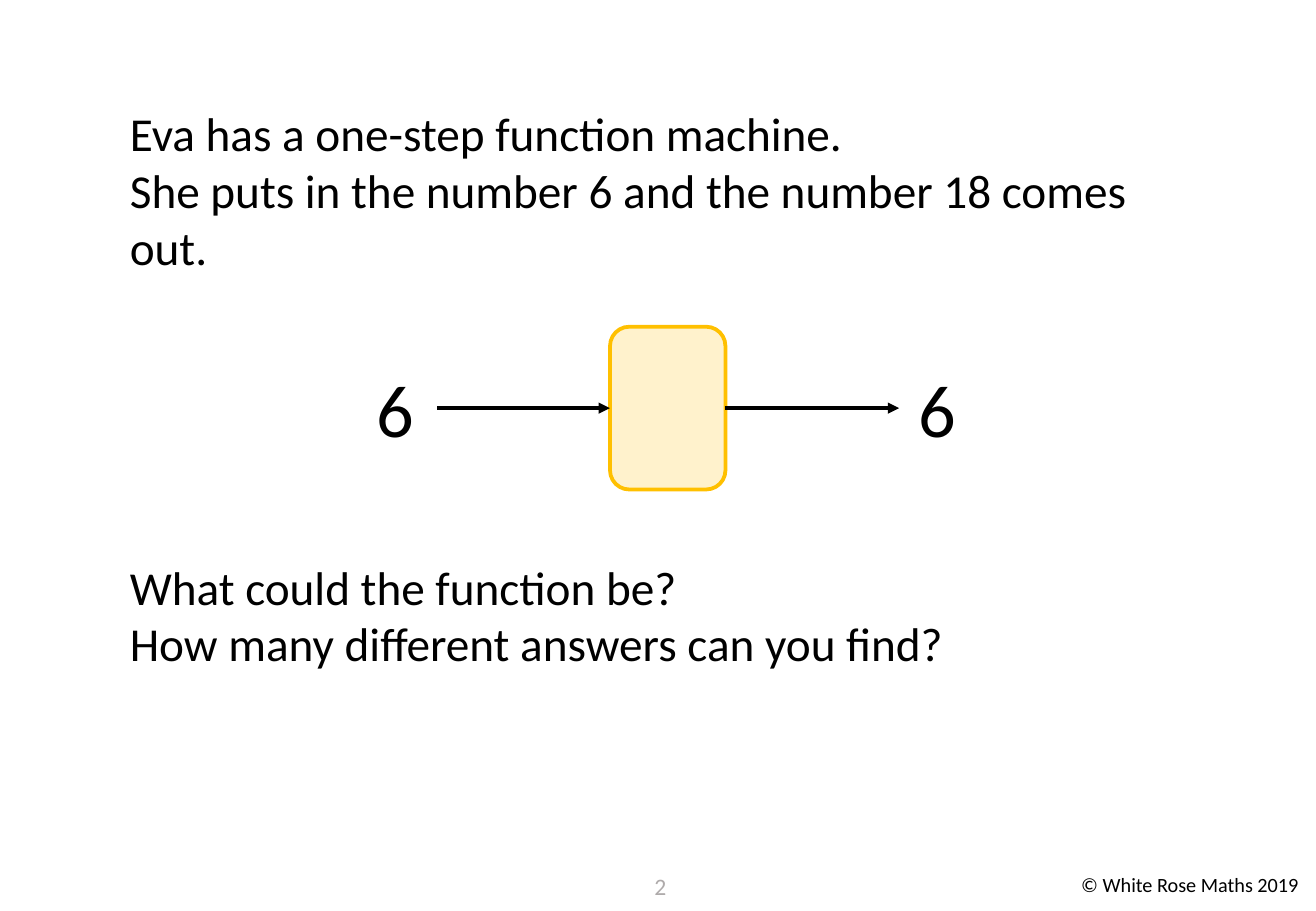
from lxml import etree
from pptx import Presentation
from pptx.dml.color import RGBColor
from pptx.enum.shapes import MSO_CONNECTOR as CONN, MSO_SHAPE as SHAPE
from pptx.enum.text import PP_ALIGN as ALIGN
from pptx.oxml.ns import qn
from pptx.util import Inches, Pt

# Content
QUESTION = [
    "Eva has a one-step function machine.",
    "She puts in the number 6 and the number 18 comes out.",
    "What could the function be?",
    "How many different answers can you find?",
]
MACHINE_GAP = 168  # points left for the machine above the third line
INPUT, OUTPUT = "6", "6"
PAGE = "2"
COPYRIGHT = "© White Rose Maths 2019"

THEME = {
    "font": "Calibri", "ink": "000000", "muted": "AFABAB", "machine": "FFC000",
    "body": 28, "number": 44, "page": 14, "footer": 12, "line": 2.25,
}

# Layout in inches
MID_Y = 3.36
NUMBER_W, NUMBER_H = 0.7, 0.84
INPUT_X, OUTPUT_X = 2.9, 7.36
MACHINE_X, MACHINE_W, MACHINE_H = 5.02, 0.95, 1.34
ARROW_END = 7.4

prs = Presentation()
prs.slide_width, prs.slide_height = Inches(10.83), Inches(7.5)
slide = prs.slides.add_slide(prs.slide_layouts[6])


def rgb(name):
    return RGBColor.from_string(THEME[name])


def add_text(lines, box, size, color="ink", align=ALIGN.LEFT, wrap=True):
    sp = slide.shapes.add_textbox(*map(Inches, box))
    tf = sp.text_frame
    tf.word_wrap = wrap
    tf.text = "\n".join(lines)
    for p in tf.paragraphs:
        p.alignment = align
        for r in p.runs:
            r.font.color.rgb = rgb(color)
            for key, value in {"name": THEME["font"], "size": Pt(THEME[size])}.items():
                setattr(r.font, key, value)
    return sp


def add_number(text, x):
    box = (x, MID_Y - NUMBER_H / 2, NUMBER_W, NUMBER_H)
    return add_text([text], box, "number", align=ALIGN.CENTER)


def add_arrow(x1, x2, start, end=None):
    line = slide.shapes.add_connector(
        CONN.STRAIGHT, Inches(x1), Inches(MID_Y), Inches(x2), Inches(MID_Y))
    line.begin_connect(start, 3)
    if end is not None:
        line.end_connect(end, 1)
    line.line.color.rgb = rgb("ink")
    line.line.width = Pt(THEME["line"])
    etree.SubElement(line.line._get_or_add_ln(), qn("a:tailEnd"), type="triangle")
    etree.SubElement(line._element.spPr, qn("a:effectLst"))


# Footer
add_text([COPYRIGHT], (8.8, 7.13, 2, 0.3), "footer", wrap=False)
add_text([PAGE], (5.18, 7.13, 0.51, 0.4), "page", "muted", ALIGN.CENTER)

# Question text
question = add_text(QUESTION, (0.97, 0.81, 8.81, 4.81), "body")
question.text_frame.paragraphs[2].space_before = Pt(MACHINE_GAP)

# Function machine
number_in = add_number(INPUT, INPUT_X)
add_number(OUTPUT, OUTPUT_X)
machine = slide.shapes.add_shape(
    SHAPE.ROUNDED_RECTANGLE, Inches(MACHINE_X), Inches(MID_Y - MACHINE_H / 2),
    Inches(MACHINE_W), Inches(MACHINE_H))
machine.shadow.inherit = False
machine.fill.solid()
machine.fill.fore_color.rgb = rgb("machine")
fill_color = machine._element.spPr.find(qn("a:solidFill"))[0]
etree.SubElement(fill_color, qn("a:alpha"), val="20000")
machine.line.color.rgb = rgb("machine")
machine.line.width = Pt(THEME["line"])

# Arrows into and out of the machine
add_arrow(INPUT_X + NUMBER_W, MACHINE_X, number_in, machine)
add_arrow(MACHINE_X + MACHINE_W, ARROW_END, machine)

prs.save("out.pptx")
